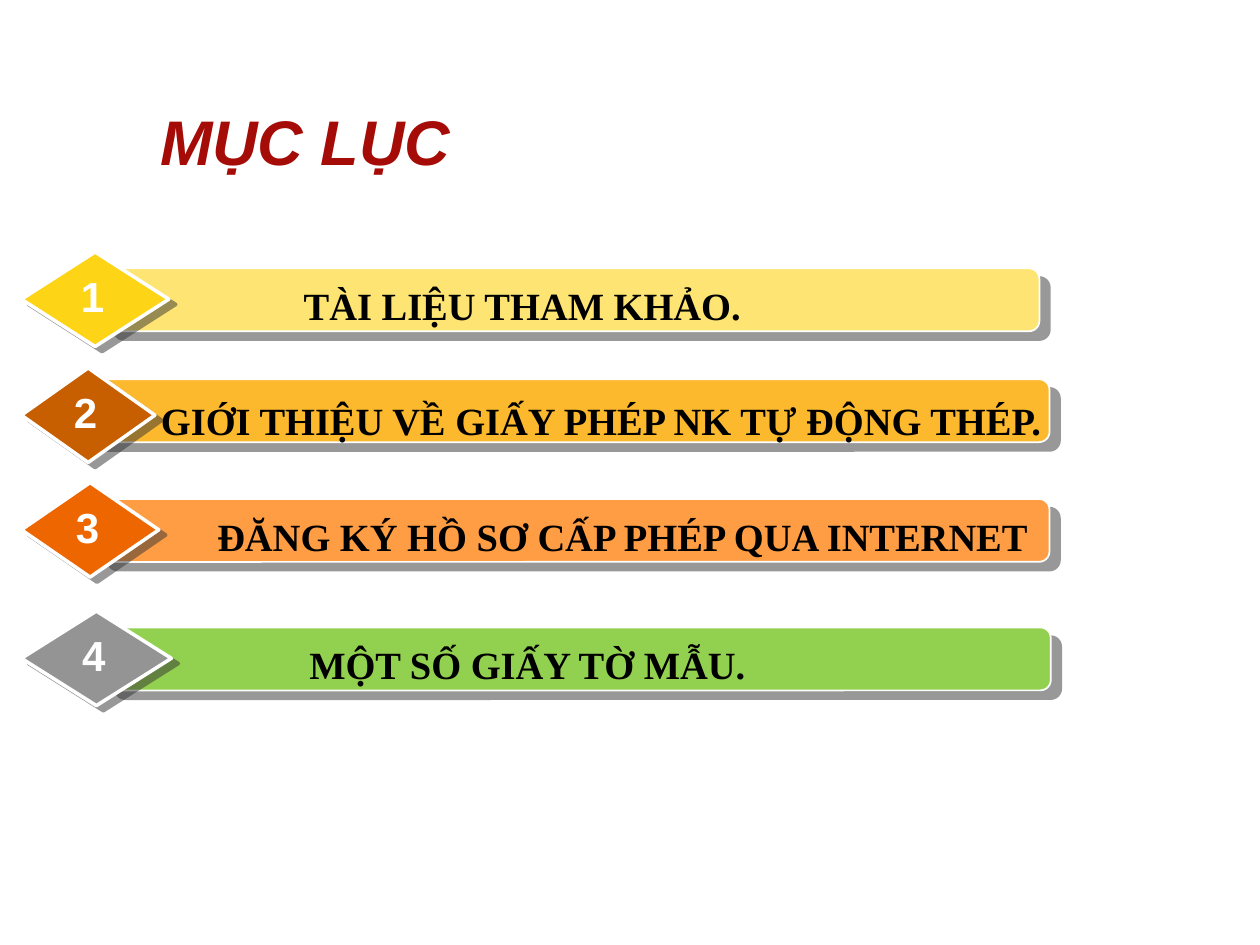
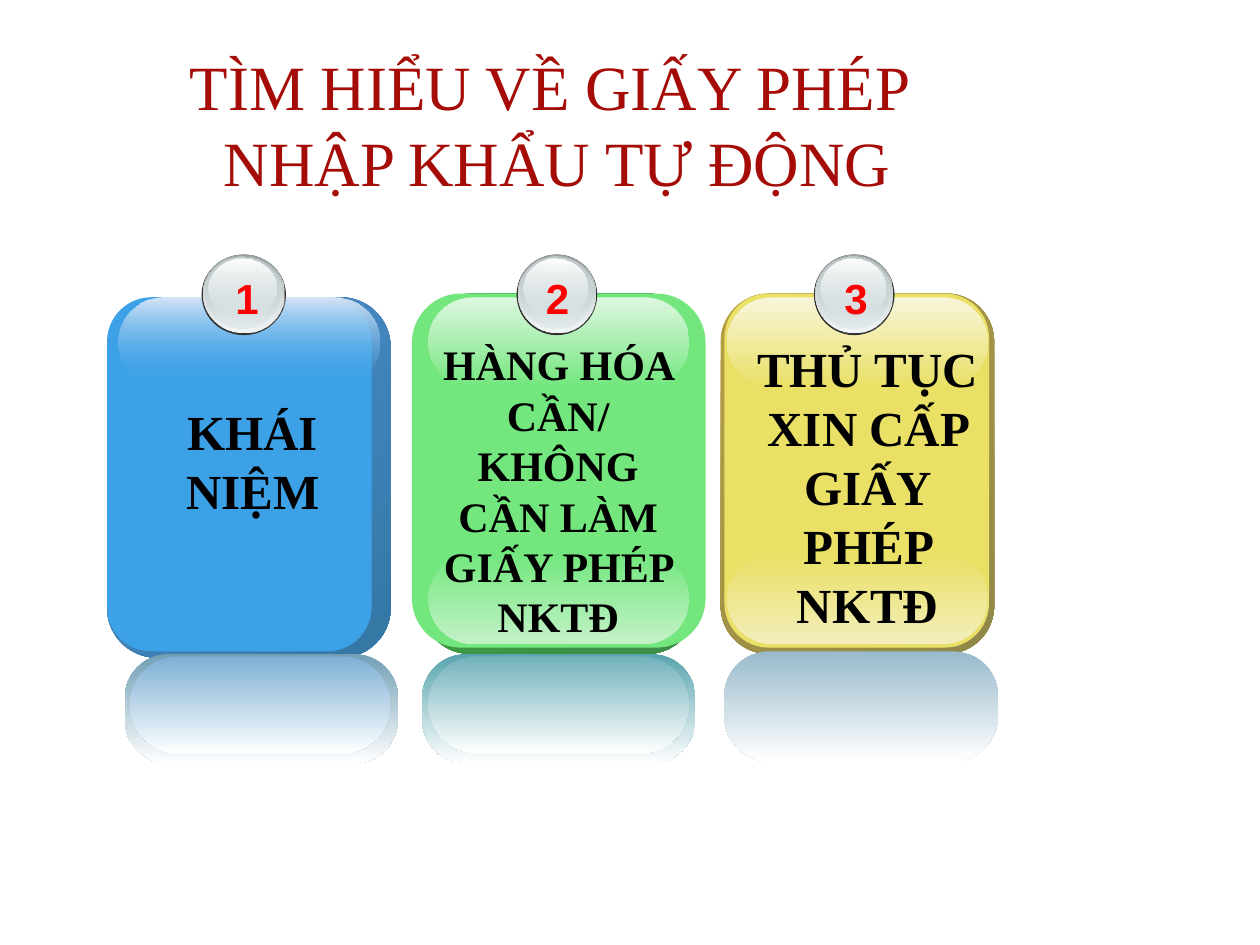
from lxml.etree import SubElement
from pptx import Presentation
from pptx.dml.color import RGBColor
from pptx.enum.shapes import MSO_SHAPE
from pptx.enum.text import MSO_ANCHOR, MSO_AUTO_SIZE, PP_ALIGN
from pptx.oxml.ns import qn
from pptx.util import Inches, Pt

WIDTH, HEIGHT = Inches(10), Inches(7.5)
COL, ROW = WIDTH / 100, HEIGHT / 75  # grid of 100 columns by 75 rows

SANS, SERIF = "Arial", "Times New Roman"
hue = RGBColor.from_string
WHITE, BLACK = hue("FFFFFF"), hue("000000")
MAROON, RED, DARK = hue("A50C07"), hue("FF0000"), hue("333333")
STEEL, MIST, PALE, ASH = hue("99A1A2"), hue("D6E1E2"), hue("F2F5F5"), hue("C1CBCC")
BLUE, GREEN, SAND = hue("3CA1E6"), hue("73E77E"), hue("E9E065")

# label, bar left, bar top, bar width, bar fill, gem top, gem width, gem fill,
# label left, label top, label width
TOPICS = [
    ("TÀI LIỆU THAM KHẢO.", 8.2, 21.3, 74.3, hue("FEE573"),
     20, 11.7, hue("FED416"), 12.1, 21.9, 58.7),
    ("GIỚI THIỆU VỀ GIẤY PHÉP NK TỰ ĐỘNG THÉP.", 6.8, 30.1, 76.5, hue("FCB92E"),
     29.2, 10.6, hue("C75E00"), 9.6, 31, 76.2),
    ("ĐĂNG KÝ HỒ SƠ CẤP PHÉP QUA INTERNET", 7.7, 39.6, 75.6, hue("FF9D44"),
     38.3, 10.9, hue("EE6600"), 11.3, 40.2, 76.2),
    ("MỘT SỐ GIẤY TỜ MẪU.", 8.3, 49.8, 75.1, hue("92D050"),
     48.5, 11.9, hue("949494"), 12.2, 50.4, 59.3),
]

# Blocks of each card: left, top, width, height, corner, fill
# A gradient is (first colour, last colour, angle[, first alpha, last alpha])
CARDS = [
    [(8.5, 23.6, 22.5, 28.6, 0.175, (hue("4E91D4"), hue("3477A4"), 45)),
     (8.5, 23.6, 21, 28.1, 0.167, BLUE),
     (9.4, 23.6, 20.7, 7.1, 0.5, (hue("D7E5F7"), BLUE, 90, 100, 0)),
     (9.9, 51.9, 21.7, 8.7, 0.404, (hue("729EB4"), WHITE, 90)),
     (10.3, 52.1, 20.7, 7.7, 0.5, (hue("7DAFD4"), WHITE, 90))],
    [(33.5, 23.3, 21.7, 28.6, 0.175, (hue("34B034"), hue("3F8B4A"), 45)),
     (32.7, 23.3, 23.3, 28.1, 0.167, GREEN),
     (34, 44, 20.7, 7.1, 0.5, (GREEN, hue("C3F2C7"), 90)),
     (34, 23.6, 20.7, 7.1, 0.5, (hue("DDF7DF"), GREEN, 90)),
     (33.5, 51.9, 21.7, 8.7, 0.404, (hue("58A4AE"), WHITE, 90)),
     (34, 52.1, 20.7, 7.7, 0.5, (hue("72B2BB"), WHITE, 90))],
    [(57.2, 23.3, 21.7, 28.6, 0.175, (hue("B59F43"), hue("8F8849"), 45)),
     (57.5, 23.3, 21, 28.1, 0.167, SAND),
     (57.7, 44, 20.7, 7.1, 0.5, (SAND, hue("F3EEBB"), 90)),
     (57.7, 23.6, 20.7, 7.1, 0.5, (hue("F8F5DB"), SAND, 90)),
     (57.5, 51.7, 21.7, 8.7, 0.404, (hue("99BACC"), WHITE, 90))],
]

# Ball left, ball width, digit left, digit width
BALLS = [(16, 6.7, 17.7, 3.5), (41, 6.4, 42.3, 3.9), (64.6, 6.4, 66, 3.9)]

# Layers of a ball 6.4 wide: left, top, width, height, fill
LAYERS = [
    (0, 0, 6.4, 6.4, DARK),
    (0.1, 0, 6.2, 6.2, (STEEL, MIST, 90)),
    (0.15, 0.1, 6.1, 6.1, (MIST, PALE, 90, 0, 100)),
    (0.2, 0.15, 5.8, 5.7, (ASH, MIST, 90, 100, 48)),
    (0.55, 0.3, 5.1, 4.6, (WHITE, MIST, 90, 100, 38)),
]

# Label, left, top, width, height, size
LABELS = [
    ("KHÁI NIỆM", 10.8, 31.4, 18.5, 10.4, 28),
    ("HÀNG HÓA CẦN/ KHÔNG CẦN LÀM GIẤY PHÉP NKTĐ", 33.3, 26.4, 22, 25.2, 24),
    ("THỦ TỤC XIN CẤP GIẤY PHÉP NKTĐ", 57.5, 26.4, 22.7, 24.6, 28),
]


def place(x, y, w, h):
    """Turn grid units into left, top, width and height."""
    return [round(n) for n in (x * COL, y * ROW, w * COL, h * ROW)]


def paint(shape, fill):
    """Fill with one colour, or with a gradient given as a tuple."""
    if isinstance(fill, RGBColor):
        shape.fill.solid()
        shape.fill.fore_color.rgb = fill
        return
    first, last, angle, *alphas = fill
    shape.fill.gradient()
    shape.fill.gradient_angle = 360 - angle
    for stop, tint, spot in zip(shape.fill.gradient_stops, (first, last), (0, 1)):
        stop.color.rgb = tint
        stop.position = spot
    for node, alpha in zip(shape._element.spPr.iter(qn("a:srgbClr")), alphas):
        SubElement(node, qn("a:alpha"), val=str(alpha * 1000))


def draw(slide, kind, box, fill, corner=None, edge=0):
    shape = slide.shapes.add_shape(kind, *place(*box))
    shape.shadow.inherit = False
    paint(shape, fill)
    if corner is not None:
        shape.adjustments[0] = corner
    if edge:
        shape.line.color.rgb = WHITE
        shape.line.width = Pt(edge)
    else:
        shape.line.fill.background()
    return shape


def shade(shape, reach, angle):
    """Add a hard, half-clear shadow."""
    effects = shape._element.spPr.find(qn("a:effectLst"))
    outer = SubElement(effects, qn("a:outerShdw"), dist=str(Pt(reach)),
                       dir=str(angle * 60000), algn="ctr", rotWithShape="0")
    tint = SubElement(outer, qn("a:srgbClr"), val=str(DARK))
    SubElement(tint, qn("a:alpha"), val="50000")


def write(shape, lines, font, size, tint, align=PP_ALIGN.CENTER, bold=True, italic=False):
    frame = shape.text_frame
    frame.word_wrap = True
    frame.auto_size = MSO_AUTO_SIZE.NONE
    frame.vertical_anchor = MSO_ANCHOR.TOP
    for i, line in enumerate(lines):
        para = frame.paragraphs[0] if i == 0 else frame.add_paragraph()
        para.alignment = align
        run = para.add_run()
        run.text = line
        run.font.name, run.font.size = font, Pt(size)
        run.font.bold, run.font.italic = bold, italic
        run.font.color.rgb = tint


def label(slide, text, box, font, size, tint):
    write(slide.shapes.add_textbox(*place(*box)), [text], font, size, tint)


def start(deck, lines, box, font, **style):
    """Add a slide with its title."""
    slide = deck.slides.add_slide(deck.slide_layouts[5])
    title = slide.shapes.title
    title.left, title.top, title.width, title.height = place(*box)
    write(title, lines, font, 36, MAROON, **style)
    return slide


def topic(slide, number, text, left, top, width, fill, peak, span, tint, x, y, w):
    bar = draw(slide, MSO_SHAPE.ROUNDED_RECTANGLE, (left, top, width, 5), fill, 0.167, 1)
    shade(bar, 7.8, 40)
    gem = draw(slide, MSO_SHAPE.DIAMOND, (1.7, peak, span, 7.5), tint, edge=2)
    shade(gem, 5, 37)
    label(slide, text, (x, y, w, 4.7), SERIF, 22, BLACK)
    label(slide, str(number), (span / 2 - 1.5, peak + 1, 6, 5), SANS, 24, WHITE)


def ball(slide, number, left, width, x, w):
    scale = width / 6.4
    for dx, dy, wide, high, fill in LAYERS:
        box = (left + dx * scale, 20.2 + dy, wide * scale, high)
        draw(slide, MSO_SHAPE.OVAL, box, fill)
    label(slide, str(number), (x, 21.1, w, 5), SANS, 24, RED)


def card(slide, number, blocks, spot, note):
    for *box, corner, fill in blocks:
        draw(slide, MSO_SHAPE.ROUNDED_RECTANGLE, box, fill, corner)
    ball(slide, number, *spot)
    text, *box, size = note
    label(slide, text, box, SERIF, size, BLACK)


def main():
    deck = Presentation()
    deck.slide_width, deck.slide_height = WIDTH, HEIGHT

    index = start(deck, ["MỤC LỤC"], (11.7, 7.6, 25.8, 7.1), SANS,
                  align=PP_ALIGN.LEFT, italic=True)
    for number, row in enumerate(TOPICS, 1):
        topic(index, number, *row)

    guide = start(deck, ["TÌM HIỂU VỀ GIẤY PHÉP ", "NHẬP KHẨU TỰ ĐỘNG"],
                  (11.7, 3.3, 65, 13.1), SERIF, bold=False)
    for number, parts in enumerate(zip(CARDS, BALLS, LABELS), 1):
        card(guide, number, *parts)

    deck.save("out.pptx")


if __name__ == "__main__":
    main()
